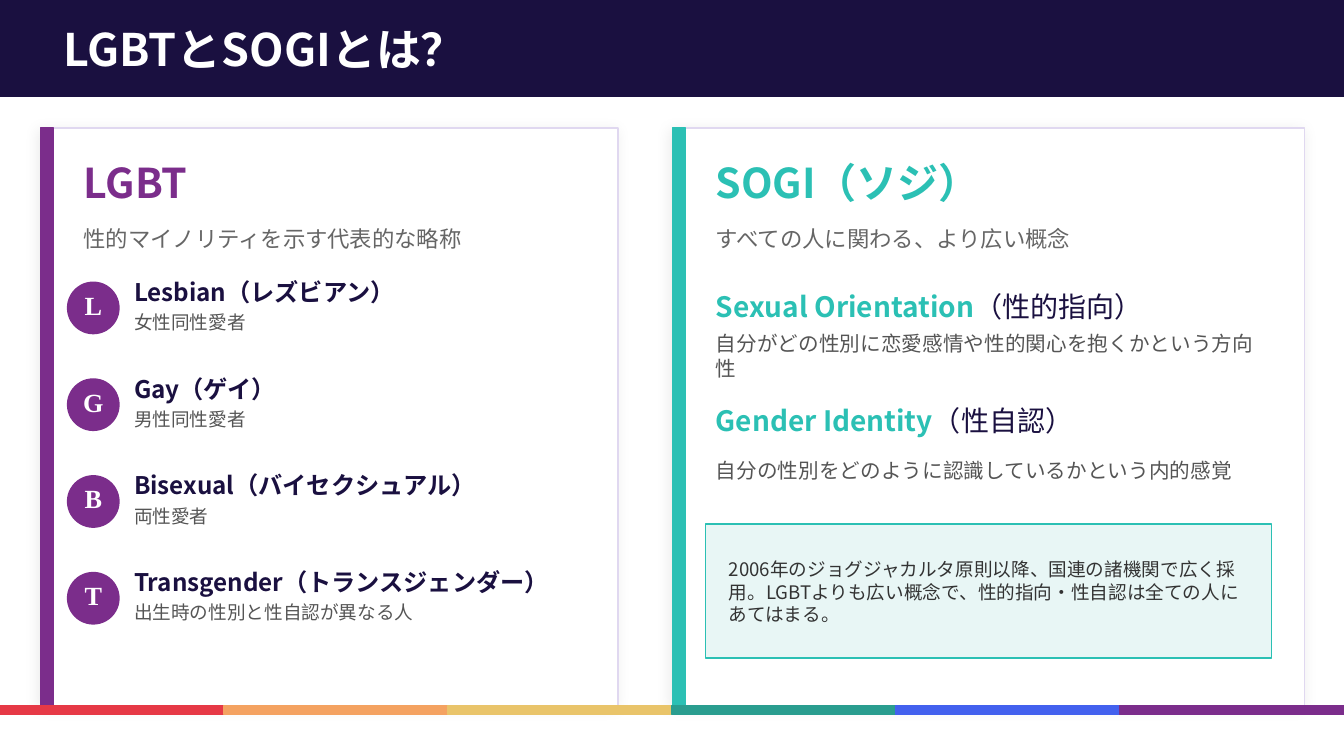
from lxml.etree import SubElement
from pptx import Presentation
from pptx.dml.color import RGBColor
from pptx.enum.shapes import MSO_SHAPE
from pptx.enum.text import MSO_ANCHOR, PP_ALIGN
from pptx.oxml.ns import qn
from pptx.util import Inches, Pt

# Content
TITLE = "LGBTとSOGIとは？"
LGBT_HEADING = ("LGBT", "性的マイノリティを示す代表的な略称")
SOGI_HEADING = ("SOGI（ソジ）", "すべての人に関わる、より広い概念")
LETTERS = [
    ("L", "Lesbian（レズビアン）", "女性同性愛者"),
    ("G", "Gay（ゲイ）", "男性同性愛者"),
    ("B", "Bisexual（バイセクシュアル）", "両性愛者"),
    ("T", "Transgender（トランスジェンダー）", "出生時の性別と性自認が異なる人"),
]
CONCEPTS = [
    ("Sexual Orientation", "（性的指向）",
     "自分がどの性別に恋愛感情や性的関心を抱くかという方向性"),
    ("Gender Identity", "（性自認）",
     "自分の性別をどのように認識しているかという内的感覚"),
]
NOTE = ("2006年のジョグジャカルタ原則以降、国連の諸機関で広く採用。"
        "LGBTよりも広い概念で、性的指向・性自認は全ての人にあてはまる。")


class Theme:
    font, badge_font = "Noto Sans CJK JP", "Times New Roman"
    navy, white, purple, teal = "1A1040", "FFFFFF", "7B2D8B", "2BC0B4"
    border, tint = "E0D8F0", "E8F6F5"
    subtitle, body, note = "666666", "555555", "333333"
    rainbow = ["E63946", "F4A261", "E9C46A", "2A9D8F", "4361EE", "7B2D8B"]
    title_size, heading_size, subtitle_size = 32, 29.3, 16
    badge_size, term_size, small_size = 18.7, 17.3, 13.3
    concept_size, description_size = 20, 14.7


# Layout, in inches
WIDTH, HEIGHT = 13.33, 7.5
HEADER_HEIGHT = 0.96
CARD_TOP, CARD_HEIGHT, ACCENT = 1.27, 5.73, 0.13
CARD_PADDING = 0.33
LETTER_TOP, LETTER_STEP, BADGE = 2.8, 0.96, 0.51
CONCEPT_TOP, CONCEPT_STEP = 2.8, 1.135
STRIPE_TOP, STRIPE_HEIGHT = 7, 0.09

deck = Presentation()
deck.slide_width, deck.slide_height = Inches(WIDTH), Inches(HEIGHT)
page = deck.slides.add_slide(deck.slide_layouts[6])


def add_block(left, top, width, height, fill, line=None, kind=MSO_SHAPE.RECTANGLE):
    block = page.shapes.add_shape(
        kind, Inches(left), Inches(top), Inches(width), Inches(height))
    block.shadow.inherit = False
    block.fill.solid()
    block.fill.fore_color.rgb = RGBColor.from_string(fill)
    block.line.color.rgb = RGBColor.from_string(line or fill)
    block.line.width = Pt(1)
    return block


def add_text(spans, left, top, width, height, *, size, color=Theme.body, bold=False,
             font=Theme.font, align=PP_ALIGN.LEFT, inset=True):
    """Spans is one string, or a list of (string, color, bold)."""
    box = page.shapes.add_textbox(
        Inches(left), Inches(top), Inches(width), Inches(height))
    frame = box.text_frame
    frame.word_wrap = True
    frame.vertical_anchor = MSO_ANCHOR.MIDDLE
    if not inset:
        frame.margin_left = frame.margin_right = 0
        frame.margin_top = frame.margin_bottom = 0
    para = frame.paragraphs[0]
    para.alignment = align
    if isinstance(spans, str):
        spans = [(spans, color, bold)]
    for words, span_color, span_bold in spans:
        span = para.add_run()
        span.text = words
        span.font.size = Pt(size)
        span.font.bold = span_bold
        span.font.color.rgb = RGBColor.from_string(span_color)
        span.font.name = font
        SubElement(span.font._element, qn("a:ea"), typeface=font)


def add_soft_shadow(shape):
    effects = shape._element.spPr.find(qn("a:effectLst"))
    shadow = SubElement(effects, qn("a:outerShdw"), blurRad=str(Pt(10)),
                        dist=str(Pt(2)), dir=str(135 * 60000),
                        algn="bl", rotWithShape="0")
    tone = SubElement(shadow, qn("a:srgbClr"), val="000000")
    SubElement(tone, qn("a:alpha"), val="8000")


def add_card(left, width, color, heading):
    """Draw a card and return the left and width of its text column."""
    add_soft_shadow(add_block(left, CARD_TOP, width, CARD_HEIGHT,
                              Theme.white, Theme.border))
    add_block(left, CARD_TOP, ACCENT, CARD_HEIGHT, color)
    column, column_width = left + CARD_PADDING, width - 2 * CARD_PADDING
    name, subtitle = heading
    add_text(name, column, CARD_TOP + 0.2, column_width, 0.67,
             size=Theme.heading_size, color=color, bold=True)
    add_text(subtitle, column, CARD_TOP + 0.86, column_width, 0.47,
             size=Theme.subtitle_size, color=Theme.subtitle)
    return column, column_width


# Header
add_block(0, 0, WIDTH, HEADER_HEIGHT, Theme.navy)
add_text(TITLE, 0.53, 0, 12.27, HEADER_HEIGHT,
         size=Theme.title_size, color=Theme.white, bold=True)

# LGBT card
add_card(0.4, 5.73, Theme.purple, LGBT_HEADING)
for row, (letter, term, meaning) in enumerate(LETTERS):
    top = LETTER_TOP + row * LETTER_STEP
    add_block(0.67, top, BADGE, BADGE, Theme.purple, kind=MSO_SHAPE.OVAL)
    add_text(letter, 0.67, top - 0.03, BADGE, BADGE, size=Theme.badge_size,
             color=Theme.white, bold=True, font=Theme.badge_font,
             align=PP_ALIGN.CENTER, inset=False)
    add_text(term, 1.33, top - 0.07, 4.53, 0.33, size=Theme.term_size,
             color=Theme.navy, bold=True, inset=False)
    add_text(meaning, 1.33, top + 0.25, 4.53, 0.29,
             size=Theme.small_size, inset=False)

# SOGI card
column, column_width = add_card(6.67, 6.27, Theme.teal, SOGI_HEADING)
for row, (term, reading, meaning) in enumerate(CONCEPTS):
    top = CONCEPT_TOP + row * CONCEPT_STEP
    add_text([(term, Theme.teal, True), (reading, Theme.navy, False)],
             column, top, column_width, 0.47, size=Theme.concept_size)
    add_text(meaning, column, top + 0.43, column_width, 0.6,
             size=Theme.description_size)
add_block(column, 5.2, column_width, 1.33, Theme.tint, Theme.teal)
add_text(NOTE, column + 0.13, 5.27, column_width - 0.27, 1.2,
         size=Theme.small_size, color=Theme.note)

# Rainbow stripe
stripe_width = WIDTH / len(Theme.rainbow)
for index, color in enumerate(Theme.rainbow):
    add_block(index * stripe_width, STRIPE_TOP, stripe_width, STRIPE_HEIGHT, color)

deck.save("out.pptx")
